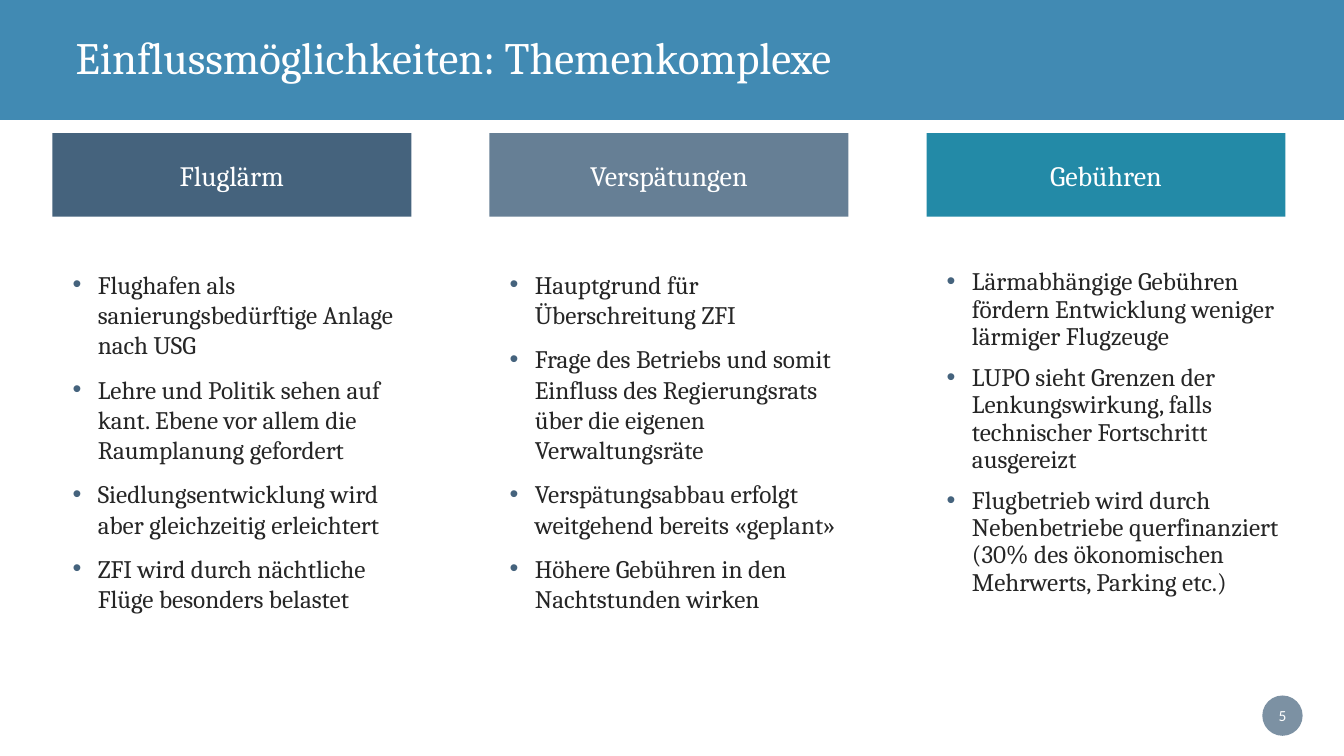
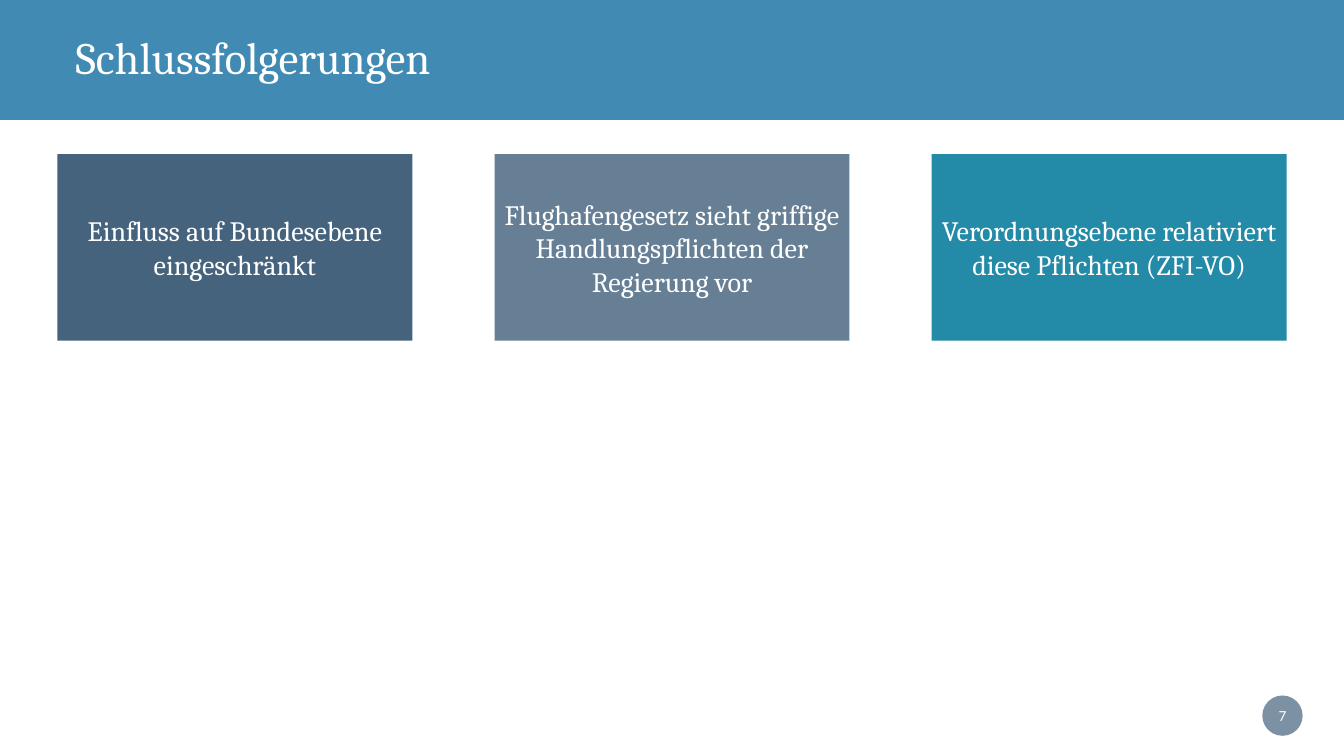
"""Build two slides on ways to influence airport policy."""
from lxml import etree
from pptx import Presentation
from pptx.dml.color import RGBColor
from pptx.enum.shapes import MSO_SHAPE
from pptx.enum.text import MSO_ANCHOR, PP_ALIGN
from pptx.oxml.ns import qn
from pptx.util import Inches, Pt

RECT, OVAL = MSO_SHAPE.RECTANGLE, MSO_SHAPE.OVAL
LEFT, CENTER = PP_ALIGN.LEFT, PP_ALIGN.CENTER
MIDDLE = MSO_ANCHOR.MIDDLE

WHITE = RGBColor(0xFF, 0xFF, 0xFF)
INK = RGBColor(0x26, 0x26, 0x26)
BAND = RGBColor(0x41, 0x8A, 0xB3)
NAVY = RGBColor(0x45, 0x63, 0x7D)
SLATE = RGBColor(0x66, 0x7F, 0x95)
TEAL = RGBColor(0x23, 0x8A, 0xA7)
COLUMN_FILLS = [NAVY, SLATE, TEAL]
COLUMN_STEP = 4.335

TITLE = {"size": Pt(32), "name": "Cambria"}
HEADING = {"size": Pt(20), "name": "Cambria"}
BODY = {"size": Pt(18), "name": "Cambria"}
NUMBER = {"size": Pt(11), "name": "Calibri"}

SLIDES = [
    {
        "title": "Einflussmöglichkeiten: Themenkomplexe",
        "number": "5",
        "box": (0.52, 1.32, 3.56, 0.83),
        "columns": [
            ("Fluglärm", 1.0, [
                "Flughafen als sanierungsbedürftige Anlage nach USG",
                "Lehre und Politik sehen auf kant. Ebene vor allem die Raumplanung gefordert",
                "Siedlungsentwicklung wird aber gleichzeitig erleichtert",
                "ZFI wird durch nächtliche Flüge besonders belastet",
            ]),
            ("Verspätungen", 1.0, [
                "Hauptgrund für Überschreitung ZFI",
                "Frage des Betriebs und somit Einfluss des Regierungsrats über die eigenen Verwaltungsräte",
                "Verspätungsabbau erfolgt weitgehend bereits «geplant»",
                "Höhere Gebühren in den Nachtstunden wirken",
            ]),
            ("Gebühren", 0.9, [
                "Lärmabhängige Gebühren fördern Entwicklung weniger lärmiger Flugzeuge",
                "LUPO sieht Grenzen der Lenkungswirkung, falls technischer Fortschritt ausgereizt",
                "Flugbetrieb wird durch Nebenbetriebe querfinanziert (30% des ökonomischen Mehrwerts, Parking etc.)",
            ]),
        ],
    },
    {
        "title": "Schlussfolgerungen",
        "number": "7",
        "box": (0.57, 1.53, 3.52, 1.85),
        "columns": [
            ("Einfluss auf Bundesebene eingeschränkt", 1.0, []),
            ("Flughafengesetz sieht griffige Handlungspflichten der Regierung vor", 1.0, []),
            ("Verordnungsebene relativiert diese Pflichten (ZFI-VO)", 1.0, []),
        ],
    },
]


def add_box(s, kind, box, fill, text, font, align=CENTER, margins=(0.1, 0.05, 0.1, 0.05)):
    sp = s.shapes.add_shape(kind, *map(Inches, box))
    sp.shadow.inherit = False
    sp.fill.solid()
    sp.fill.fore_color.rgb = fill
    sp.line.fill.background()
    tf = sp.text_frame
    tf.word_wrap = True
    tf.vertical_anchor = MIDDLE
    for side, margin in zip(("left", "top", "right", "bottom"), margins):
        setattr(tf, f"margin_{side}", Inches(margin))
    p = tf.paragraphs[0]
    p.alignment = align
    r = p.add_run()
    r.text = text
    r.font.color.rgb = WHITE
    for key, value in font.items():
        setattr(r.font, key, value)
    return sp


def add_bullets(s, box, items, spacing):
    tf = s.shapes.add_textbox(*map(Inches, box)).text_frame
    tf.word_wrap = True
    tf.margin_left = Inches(0.2)
    tf.margin_top = tf.margin_right = tf.margin_bottom = 0
    for i, item in enumerate(items):
        p = tf.paragraphs[0] if i == 0 else tf.add_paragraph()
        p.line_spacing = spacing
        p.space_before = Pt(10)
        pPr = p._p.get_or_add_pPr()
        pPr.set("marL", str(Inches(0.25)))
        pPr.set("indent", str(-Inches(0.25)))
        color = etree.SubElement(pPr, qn("a:buClr"))
        etree.SubElement(color, qn("a:srgbClr"), val=str(NAVY))
        etree.SubElement(pPr, qn("a:buFont"), typeface="Arial")
        etree.SubElement(pPr, qn("a:buChar"), char="•")
        r = p.add_run()
        r.text = item
        r.font.color.rgb = INK
        for key, value in BODY.items():
            setattr(r.font, key, value)


prs = Presentation()
prs.slide_width, prs.slide_height = Inches(13.33), Inches(7.5)

for page in SLIDES:
    s = prs.slides.add_slide(prs.slide_layouts[6])
    sp = add_box(s, RECT, (0, 0, 13.33, 1.19), BAND, page["title"], TITLE, LEFT, (0.75, 0.2, 0.2, 0.2))
    sp.text_frame.paragraphs[0].line_spacing = 0.9

    sp = add_box(s, OVAL, (12.52, 6.9, 0.4, 0.4), NAVY, page["number"], NUMBER,
                 margins=(0.02, 0.05, 0.02, 0.05))
    color = sp._element.spPr.find(qn("a:solidFill")).find(qn("a:srgbClr"))
    etree.SubElement(color, qn("a:alpha"), val="70000")

    left, top, width, height = page["box"]
    for i, (heading, spacing, items) in enumerate(page["columns"]):
        x = left + i * COLUMN_STEP
        add_box(s, RECT, (x, top, width, height), COLUMN_FILLS[i], heading, HEADING)
        if items:
            add_bullets(s, (x, 2.67, width, 3.99), items, spacing)

prs.save("out.pptx")
